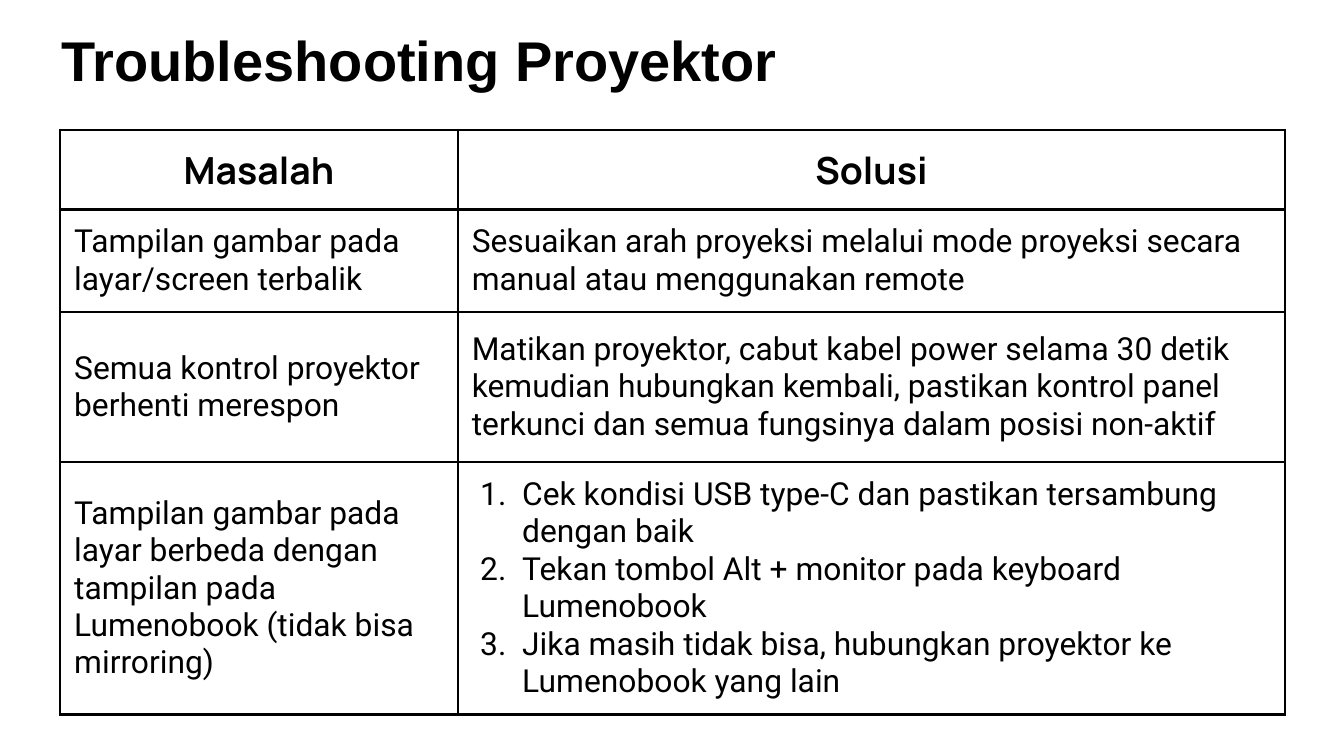
from lxml import etree
from pptx import Presentation
from pptx import util as u
from pptx.dml.color import RGBColor
from pptx.enum import text
from pptx.oxml.ns import qn

EMU_PER_PX = 9525
COLORS = {"ink": "000000", "paper": "FFFFFF"}
COLUMN_WIDTHS = [284, 591]
ROW_HEIGHTS = [56, 73, 107, 179]
CELL_MARGIN = 10
HEADERS = ["Masalah", "Solusi"]
PROBLEMS = [
    ("Tampilan gambar pada layar/screen terbalik",
     "Sesuaikan arah proyeksi melalui mode proyeksi secara manual atau menggunakan remote"),
    ("Semua kontrol proyektor berhenti merespon",
     "Matikan proyektor, cabut kabel power selama 30 detik kemudian hubungkan kembali, "
     "pastikan kontrol panel terkunci dan semua fungsinya dalam posisi non-aktif"),
    ("Tampilan gambar pada layar berbeda dengan tampilan pada Lumenobook (tidak bisa mirroring)",
     ["Cek kondisi USB type-C dan pastikan tersambung dengan baik",
      "Tekan tombol Alt + monitor pada keyboard Lumenobook",
      "Jika masih tidak bisa, hubungkan proyektor ke Lumenobook yang lain"]),
]


def px(length):
    return u.Emu(length * EMU_PER_PX)


def color(name):
    return RGBColor.from_string(COLORS[name])


def format_paragraph(paragraph, font_name, size, bold=False, align=text.PP_ALIGN.LEFT):
    paragraph.alignment = align
    for run in paragraph.runs:
        run.font.name = font_name
        run.font.size = u.Pt(size)
        run.font.bold = bold
        run.font.color.rgb = color("ink")


def number_paragraph(paragraph):
    """Turn the paragraph into an automatically numbered item with a hanging indent."""
    properties = paragraph._p.get_or_add_pPr()
    properties.set("marL", str(px(36)))
    properties.set("indent", str(px(-30)))
    bullet_color = etree.SubElement(properties, qn("a:buClr"))
    etree.SubElement(bullet_color, qn("a:srgbClr"), val=COLORS["ink"])
    etree.SubElement(properties, qn("a:buFont"), typeface="Roboto")
    etree.SubElement(properties, qn("a:buAutoNum"), type="arabicPeriod")


def add_borders(cell, width=1.5):
    properties = cell._tc.get_or_add_tcPr()
    for index, side in enumerate(("lnL", "lnR", "lnT", "lnB")):
        line = etree.Element(qn(f"a:{side}"), w=str(u.Pt(width)))
        fill = etree.SubElement(line, qn("a:solidFill"))
        etree.SubElement(fill, qn("a:srgbClr"), val=COLORS["ink"])
        properties.insert(index, line)


def fill_cell(cell, content, is_header):
    cell.fill.solid()
    cell.fill.fore_color.rgb = color("paper")
    add_borders(cell)
    cell.vertical_anchor = text.MSO_ANCHOR.MIDDLE
    cell.margin_left = cell.margin_right = px(CELL_MARGIN)
    cell.margin_top = cell.margin_bottom = px(CELL_MARGIN)
    is_list = isinstance(content, list)
    cell.text_frame.text = "\n".join(content) if is_list else content
    for paragraph in cell.text_frame.paragraphs:
        if is_header:
            format_paragraph(paragraph, "Manrope", 20, True, text.PP_ALIGN.CENTER)
        else:
            format_paragraph(paragraph, "Roboto", 17)
        if is_list:
            number_paragraph(paragraph)


def set_title(slide, title_text):
    title = slide.shapes.title
    title.left, title.top, title.width, title.height = map(px, (34, 15, 837, 55))
    frame = title.text_frame
    frame.text = title_text
    frame.word_wrap = True
    frame.auto_size = text.MSO_AUTO_SIZE.NONE
    frame.vertical_anchor = text.MSO_ANCHOR.MIDDLE
    frame.margin_left = frame.margin_right = px(CELL_MARGIN)
    frame.margin_top = frame.margin_bottom = px(CELL_MARGIN)
    format_paragraph(frame.paragraphs[0], "Arial", 30, True)


def add_problem_table(slide):
    rows = [HEADERS, *PROBLEMS]
    table = slide.shapes.add_table(
        len(rows), len(HEADERS), px(43), px(93),
        px(sum(COLUMN_WIDTHS)), px(sum(ROW_HEIGHTS))).table
    for column, width in zip(table.columns, COLUMN_WIDTHS):
        column.width = px(width)
    for row_index, (row, height) in enumerate(zip(table.rows, ROW_HEIGHTS)):
        row.height = px(height)
        for cell, content in zip(row.cells, rows[row_index]):
            fill_cell(cell, content, row_index == 0)


def main():
    presentation = Presentation()
    presentation.slide_width, presentation.slide_height = px(960), px(540)
    slide = presentation.slides.add_slide(presentation.slide_layouts.get_by_name("Title Only"))
    set_title(slide, "Troubleshooting Proyektor")
    add_problem_table(slide)
    presentation.save("out.pptx")


if __name__ == "__main__":
    main()
